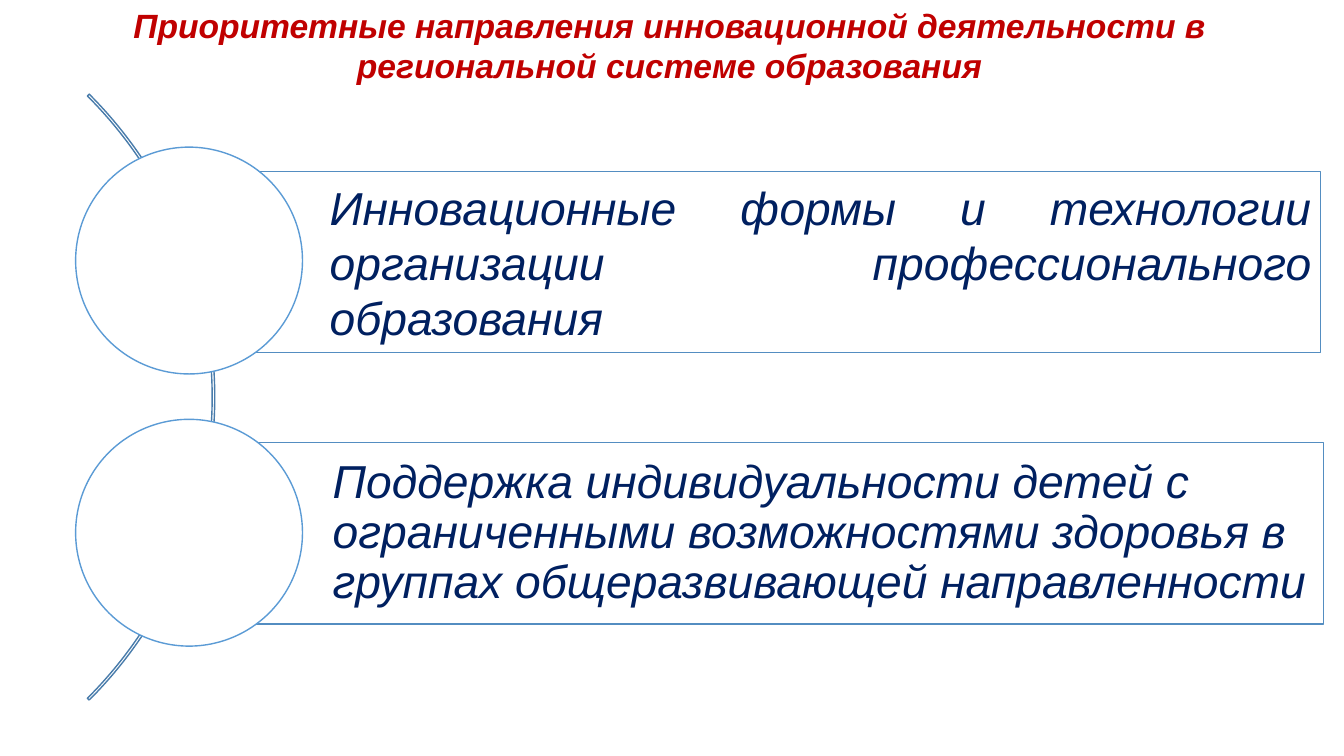
from pptx import Presentation
from pptx.dml.color import RGBColor
from pptx.enum.shapes import MSO_SHAPE as Shape
from pptx.enum.text import MSO_ANCHOR as Anchor, MSO_AUTO_SIZE as AutoSize, PP_ALIGN as Align
from pptx.util import Inches, Pt

COLORS = {
    "white": "FFFFFF",
    "title": "C00000",
    "text": "002060",
    "arc": "497CAB",
    "panel": "538DC1",
    "circle": "5B9BD5",
}
TITLE = "Приоритетные направления инновационной деятельности в региональной системе образования"
# Panel left, panel top, circle top, text, paragraph format
DIRECTIONS = [
    (1.84, 1.7, 1.46,
     "Инновационные формы и технологии организации профессионального образования",
     {"align": Align.JUSTIFY}),
    (1.87, 4.39, 4.16,
     "Поддержка индивидуальности детей с ограниченными возможностями здоровья "
     "в группах общеразвивающей направленности",
     {"spacing": 0.9}),
]


def color(name):
    return RGBColor.from_string(COLORS[name])


def write_text(frame, text, size, ink, bold=False, align=Align.LEFT, spacing=None):
    frame.word_wrap = True
    para = frame.paragraphs[0]
    para.alignment = align
    para.line_spacing = spacing
    span = para.add_run()
    span.text = text
    font = span.font
    font.name, font.size = "Arial", Pt(size)
    font.bold, font.italic = bold, True
    font.color.rgb = color(ink)


def add_outlined(page, kind, left, top, width, height, line):
    shape = page.shapes.add_shape(
        kind, Inches(left), Inches(top), Inches(width), Inches(height))
    shape.shadow.inherit = False
    shape.fill.solid()
    shape.fill.fore_color.rgb = color("white")
    shape.line.color.rgb = color(line)
    shape.line.width = Pt(1)
    return shape


def add_title(page):
    box = page.shapes.add_textbox(Inches(0.23), 0, Inches(12.82), Inches(0.91))
    write_text(box.text_frame, TITLE, 24, "title", bold=True, align=Align.CENTER)
    box.text_frame.auto_size = AutoSize.SHAPE_TO_FIT_TEXT


def add_arc(page):
    arc = add_outlined(page, Shape.BLOCK_ARC, -6.37, -0.31, 8.5, 8.5, "arc")
    arc.fill.background()
    # Start angle, end angle, thickness
    for index, value in enumerate((189, 27, 0.003)):
        arc.adjustments[index] = value


def add_direction(page, left, top, circle_top, text, layout):
    panel = add_outlined(page, Shape.RECTANGLE, left, top, 11.26, 1.8, "panel")
    frame = panel.text_frame
    frame.vertical_anchor = Anchor.MIDDLE
    frame.margin_left = Inches(1.43)
    frame.margin_top = frame.margin_right = frame.margin_bottom = Inches(0.09)
    write_text(frame, text, 33, "text", **layout)
    add_outlined(page, Shape.OVAL, 0.75, circle_top, 2.25, 2.25, "circle")


def main():
    deck = Presentation()
    deck.slide_width, deck.slide_height = Inches(13.33), Inches(7.5)
    page = deck.slides.add_slide(deck.slide_layouts[6])
    add_title(page)
    add_arc(page)
    for direction in DIRECTIONS:
        add_direction(page, *direction)
    deck.save("out.pptx")


if __name__ == "__main__":
    main()
